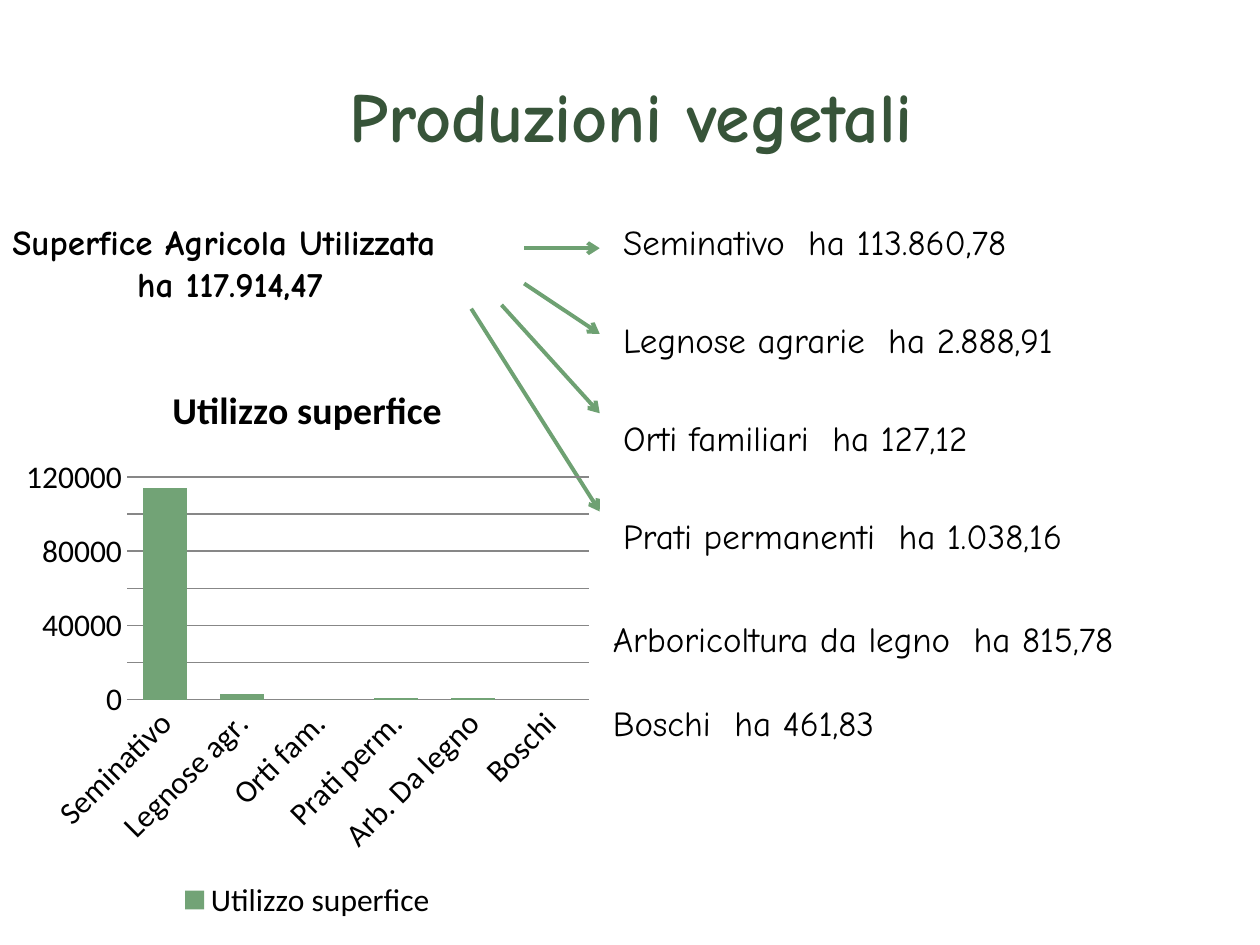
"""Build the slide on plant production and land use."""
import dataclasses

import pptx
import pptx.chart.data
import pptx.dml.color
import pptx.enum.chart
import pptx.enum.shapes
import pptx.enum.text
import pptx.oxml
import pptx.oxml.ns
import pptx.util

COLS, ROWS = 100, 75


@dataclasses.dataclass(frozen=True)
class Theme:
    """Hold the colours, fonts and type sizes."""
    ink: str = "000000"
    head: str = "375439"
    arrow: str = "6EA172"
    bar: str = "72A376"
    grid: str = "878787"
    hand: str = "Comic Neue"
    sans: str = "Calibri"
    big: float = 40
    mid: float = 20
    label: float = 18
    name: float = 21.6
    line: float = 2.25


THEME = Theme()
FIELDS = [
    ("Seminativo", "Seminativo", "113.860,78"),
    ("Legnose agrarie", "Legnose agr.", "2.888,91"),
    ("Orti familiari", "Orti fam.", "127,12"),
    ("Prati permanenti", "Prati perm.", "1.038,16"),
    ("Arboricoltura da legno", "Arb. Da legno", "815,78"),
    ("Boschi", "Boschi", "461,83"),
]
ARROWS = [(41.6, 19.7, 19.7), (41.6, 22.5, 26.5),
          (39.8, 24.2, 32.8), (37.4, 24.5, 40.6)]


def cells(*nums):
    """Turn grid cells of a tenth of an inch into lengths."""
    return [pptx.util.Inches(num / 10) for num in nums]


def rgb(code):
    """Return the colour for a hex code."""
    return pptx.dml.color.RGBColor.from_string(code)


def round_area(area):
    """Read an Italian number and round it to thousands."""
    return round(float(area.replace(".", "").replace(",", ".")), -3)


def style(font, face, size, color, bold=False):
    """Set the face, size, colour and weight of a font."""
    font.name, font.size, font.bold = face, pptx.util.Pt(size), bold
    font.color.rgb = rgb(color)


def place(shape, box):
    """Move and size a shape on the grid."""
    shape.left, shape.top, shape.width, shape.height = cells(*box)


def write(frame, lines, gap=0, bold=False):
    """Write unbulleted lines with a gap in points between them."""
    frame.word_wrap = True
    frame.text = "\n".join(lines)
    for num, para in enumerate(frame.paragraphs):
        para.space_before = pptx.util.Pt(gap if num else 0)
        props = para._p.get_or_add_pPr()
        props.set("marL", "0")
        props.set("indent", "0")
        props.append(pptx.oxml.parse_xml(
            f'<a:buNone {pptx.oxml.ns.nsdecls("a")}/>'))
        for run in para.runs:
            style(run.font, THEME.hand, THEME.mid, THEME.ink, bold)


def add_head(slide, text):
    """Fill the title placeholder."""
    title = slide.shapes.title
    place(title, (5.1, 2.85, 90, 12.5))
    frame = title.text_frame
    frame.text = text
    frame.vertical_anchor = pptx.enum.text.MSO_ANCHOR.MIDDLE
    para = frame.paragraphs[0]
    para.alignment = pptx.enum.text.PP_ALIGN.CENTER
    style(para.runs[0].font, THEME.hand, THEME.big, THEME.head, True)


def add_text(slide, box, lines, gap=0, bold=False):
    """Add a text box and return its frame."""
    frame = slide.shapes.add_textbox(*cells(*box)).text_frame
    write(frame, lines, gap, bold)
    return frame


def add_arrow(slide, left, top, end):
    """Draw an arrow that ends at the list's left edge."""
    link = slide.shapes.add_connector(
        pptx.enum.shapes.MSO_CONNECTOR.STRAIGHT,
        *cells(left, top, 47.6, end))
    link.line.color.rgb = rgb(THEME.arrow)
    link.line.width = pptx.util.Pt(THEME.line)
    space = pptx.oxml.ns.nsdecls("a")
    link.line._get_or_add_ln().append(
        pptx.oxml.parse_xml(f'<a:tailEnd {space} type="arrow"/>'))
    link._element.spPr.append(pptx.oxml.parse_xml(f"<a:effectLst {space}/>"))


def add_bars(slide, box, name):
    """Add the column chart of hectares by use."""
    enum = pptx.enum.chart
    data = pptx.chart.data.CategoryChartData()
    data.categories = [short for _, short, _ in FIELDS]
    data.add_series(name, [round_area(area) for _, _, area in FIELDS])
    chart = slide.shapes.add_chart(
        enum.XL_CHART_TYPE.COLUMN_CLUSTERED, *cells(*box), data).chart
    style(chart.font, THEME.sans, THEME.label, THEME.ink)
    chart.has_title = True
    frame = chart.chart_title.text_frame
    frame.text = name
    style(frame.paragraphs[0].runs[0].font,
          THEME.sans, THEME.name, THEME.ink, True)
    chart.has_legend = True
    chart.legend.position = enum.XL_LEGEND_POSITION.BOTTOM
    chart.legend.include_in_layout = False
    plot = chart.plots[0]
    plot.vary_by_categories = False
    plot.gap_width, plot.overlap = 75, -25
    fill = plot.series[0].format.fill
    fill.solid()
    fill.fore_color.rgb = rgb(THEME.bar)
    cat, val = chart.category_axis, chart.value_axis
    for axis in (cat, val):
        axis.major_tick_mark = enum.XL_TICK_MARK.NONE
        style(axis.tick_labels.font, THEME.sans, THEME.label, THEME.ink)
    cat.format.line.color.rgb = rgb(THEME.grid)
    val.format.line.fill.background()
    val.minimum_scale, val.maximum_scale, val.major_unit = 0, 120000, 20000
    val.major_gridlines.format.line.color.rgb = rgb(THEME.grid)
    val.tick_labels.number_format = "General"
    val.tick_labels.number_format_is_linked = False


def main():
    """Build and save the slide."""
    deck = pptx.Presentation()
    deck.slide_width, deck.slide_height = cells(COLS, ROWS)
    slide = deck.slides.add_slide(deck.slide_layouts[1])
    add_head(slide, "Produzioni vegetali")
    lines = [f"{label}  ha {area}" for label, _, area in FIELDS]
    body = slide.placeholders[1]
    place(body, (48.45, 17, 48.1, 30.7))
    write(body.text_frame, lines[:4], gap=32)
    total = add_text(slide, (0, 17, 41.6, 7.7),
                     ["Superfice Agricola Utilizzata", "ha 117.914,47"],
                     bold=True)
    total.paragraphs[1]._p.pPr.set("marL", str(pptx.util.Inches(0.99)))
    for spot in ARROWS:
        add_arrow(slide, *spot)
    add_bars(slide, (1.15, 28.45, 46.5, 45), "Utilizzo superfice")
    add_text(slide, (47.65, 48.5, 45.9, 11.1), lines[4:], gap=24)
    deck.save("out.pptx")


if __name__ == "__main__":
    main()
